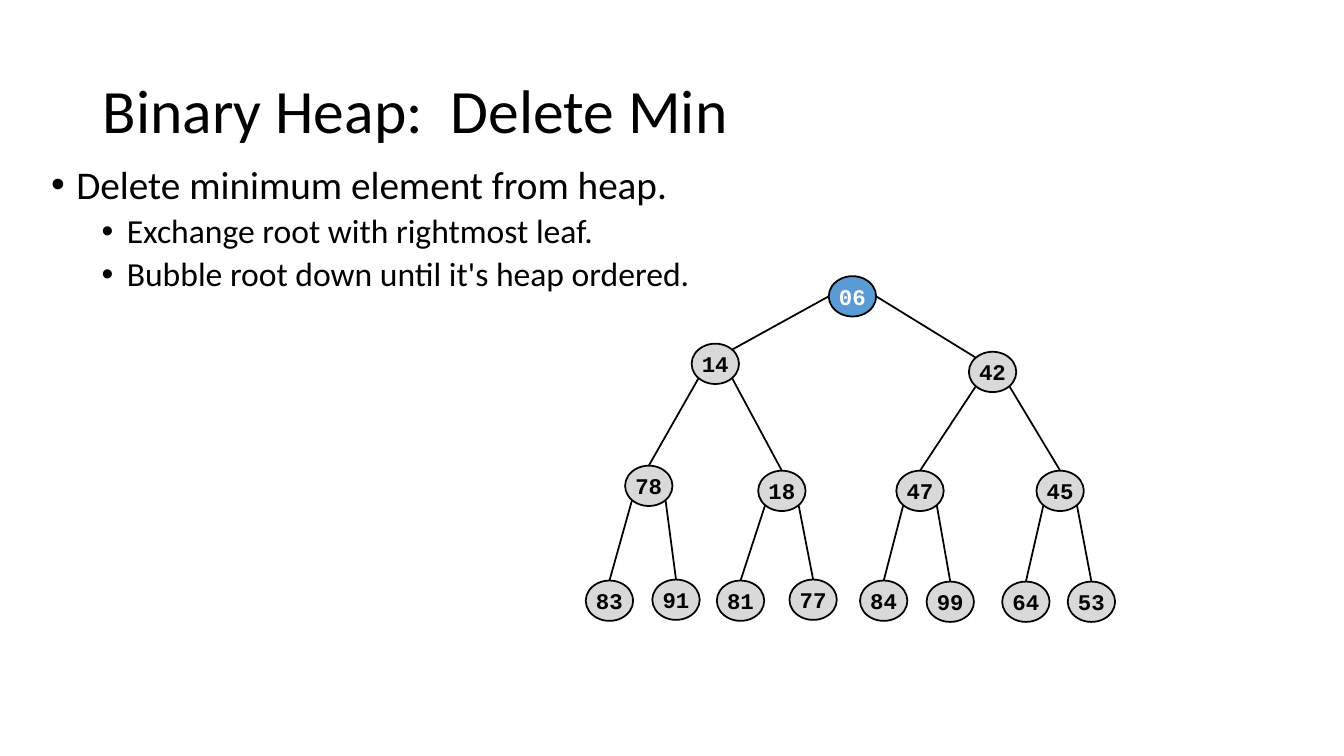
from math import sqrt

from lxml import etree
from pptx import Presentation
from pptx.dml.color import RGBColor
from pptx.enum.shapes import MSO_CONNECTOR, MSO_SHAPE
from pptx.enum.text import MSO_ANCHOR, PP_ALIGN
from pptx.oxml.ns import qn
from pptx.util import Inches, Pt

STRAIGHT = MSO_CONNECTOR.STRAIGHT
OVAL = MSO_SHAPE.OVAL
MIDDLE = MSO_ANCHOR.MIDDLE
CENTER = PP_ALIGN.CENTER

BLACK = RGBColor(0x00, 0x00, 0x00)
WHITE = RGBColor(0xFF, 0xFF, 0xFF)
BLUE = RGBColor(0x5B, 0x9B, 0xD5)
GRAY = RGBColor(0xD9, 0xD9, 0xD9)

NODE_WIDTH = 0.47
NODE_HEIGHT = 0.4
DIAGONAL_X = NODE_WIDTH / 2 / sqrt(2)
DIAGONAL_Y = NODE_HEIGHT / 2 / sqrt(2)

BULLETS = [
    ("Delete minimum element from heap.", 0, 28, 10),
    ("Exchange root with rightmost leaf.", 1, 24, 5),
    ("Bubble root down until it's heap ordered.", 1, 24, 5),
]

HEAP = [
    ("06", 8.22, 2.74),
    ("14", 6.86, 3.41), ("42", 9.61, 3.49),
    ("78", 6.2, 4.62), ("18", 7.52, 4.67), ("47", 8.89, 4.67), ("45", 10.28, 4.67),
    ("83", 5.81, 5.76), ("91", 6.47, 5.75), ("81", 7.11, 5.76), ("77", 7.83, 5.75),
    ("84", 8.53, 5.76), ("99", 9.19, 5.77), ("64", 9.94, 5.77), ("53", 10.59, 5.77),
]


def add_text(paragraph, text, font_name, size, color, bold=False):
    run = paragraph.add_run()
    run.text = text
    run.font.name = font_name
    run.font.size = Pt(size)
    run.font.bold = bold
    run.font.color.rgb = color


presentation = Presentation()
presentation.slide_width = Inches(13.33)
presentation.slide_height = Inches(7.5)
slide = presentation.slides.add_slide(presentation.slide_layouts[6])

title = slide.shapes.add_textbox(Inches(0.92), Inches(0.4), Inches(11.5), Inches(1.45))
title.text_frame.word_wrap = True
title.text_frame.vertical_anchor = MIDDLE
title_paragraph = title.text_frame.paragraphs[0]
title_paragraph.line_spacing = 0.9
add_text(title_paragraph, "Binary Heap:  Delete Min", "Calibri", 44, BLACK)

body = slide.shapes.add_textbox(Inches(0.41), Inches(1.59), Inches(6.64), Inches(5.54))
body.text_frame.word_wrap = True
for index, (text, level, size, space_before) in enumerate(BULLETS):
    paragraph = body.text_frame.add_paragraph() if index else body.text_frame.paragraphs[0]
    paragraph.level = level
    paragraph.line_spacing = 0.9
    paragraph.space_before = Pt(space_before)
    properties = paragraph._p.get_or_add_pPr()
    properties.set("marL", str(Inches(0.25 + 0.5 * level)))
    properties.set("indent", str(Inches(-0.25)))
    etree.SubElement(properties, qn("a:buFont")).set("typeface", "Arial")
    etree.SubElement(properties, qn("a:buChar")).set("char", "•")
    add_text(paragraph, text, "Calibri", size, BLACK)

centers = [(left + NODE_WIDTH / 2, top + NODE_HEIGHT / 2) for _, left, top in HEAP]
for child in range(1, len(HEAP)):
    parent = (child - 1) // 2
    side = -1 if child % 2 else 1
    start_x, start_y = centers[parent]
    end_x, end_y = centers[child]
    if parent == 0:
        start_x += side * NODE_WIDTH / 2
        end_x -= side * DIAGONAL_X
        end_y -= DIAGONAL_Y
    else:
        start_x += side * DIAGONAL_X
        start_y += DIAGONAL_Y
        end_y -= NODE_HEIGHT / 2
    edge = slide.shapes.add_connector(
        STRAIGHT, Inches(start_x), Inches(start_y), Inches(end_x), Inches(end_y))
    edge.line.color.rgb = BLACK
    edge.line.width = Pt(1.25)
    etree.SubElement(edge._element.spPr, qn("a:effectLst"))

for index, (key, left, top) in enumerate(HEAP):
    node = slide.shapes.add_shape(
        OVAL, Inches(left), Inches(top), Inches(NODE_WIDTH), Inches(NODE_HEIGHT))
    node.shadow.inherit = False
    node.fill.solid()
    node.fill.fore_color.rgb = GRAY if index else BLUE
    node.line.color.rgb = BLACK
    node.line.width = Pt(1.25)
    node.text_frame.word_wrap = False
    node.text_frame.vertical_anchor = MIDDLE
    paragraph = node.text_frame.paragraphs[0]
    paragraph.alignment = CENTER
    add_text(paragraph, key, "Courier New", 16, BLACK if index else WHITE, bold=True)

presentation.save("out.pptx")
